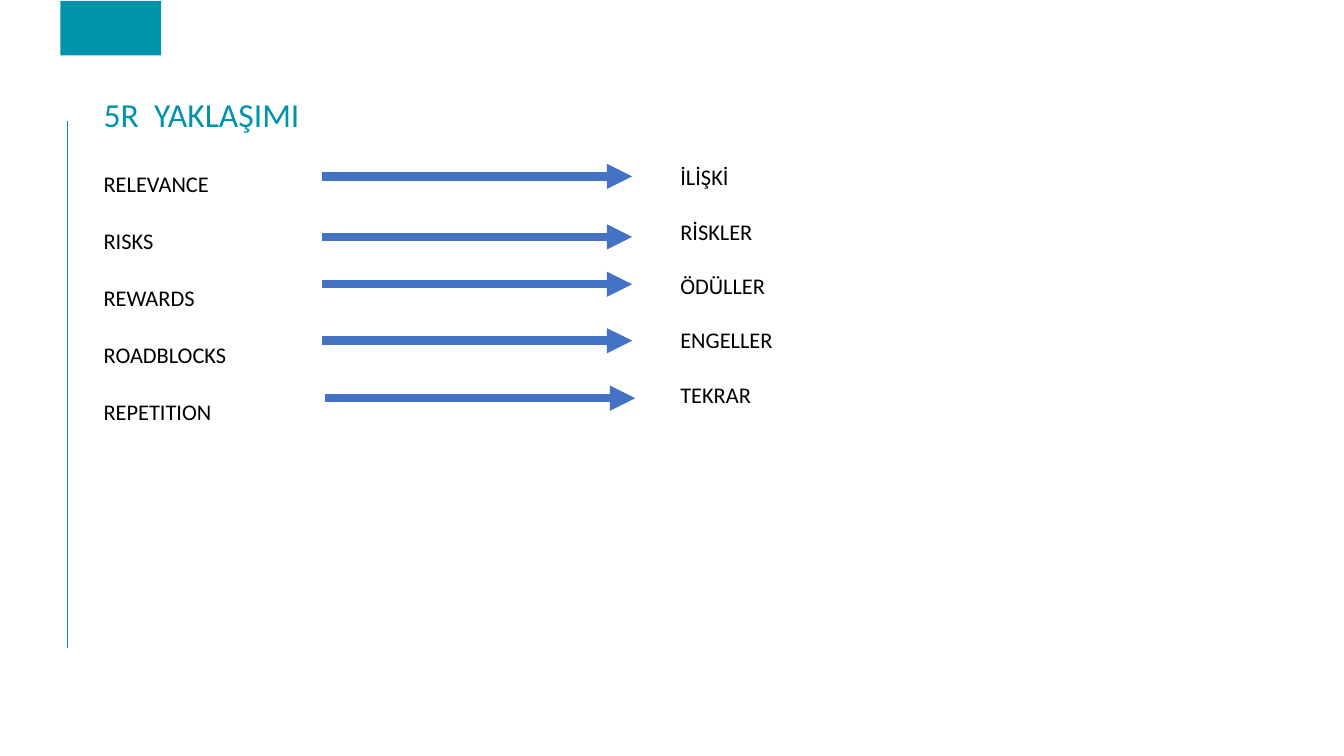
"""Builds the 5R approach slide."""
from pptx import Presentation
from pptx.dml.color import RGBColor
from pptx.enum.shapes import MSO_CONNECTOR, MSO_SHAPE
from pptx.enum.text import MSO_ANCHOR
from pptx.oxml.ns import qn
from pptx.util import Inches, Pt
from lxml.etree import SubElement

TEAL = RGBColor(0x00, 0x94, 0xAB)
BLUE = RGBColor(0x44, 0x72, 0xC4)
BLACK = RGBColor(0x00, 0x00, 0x00)
FONT = "Calibri"

ENGLISH_TERMS = ["RELEVANCE", "RISKS", "REWARDS", "ROADBLOCKS", "REPETITION"]
TURKISH_TERMS = ["İLİŞKİ", "RİSKLER", "ÖDÜLLER", "ENGELLER", "TEKRAR"]
ARROW_LENGTH = 3.08
ARROW_STARTS = [(3.19, 1.75), (3.19, 2.35), (3.19, 2.82), (3.19, 3.38), (3.22, 3.95)]


def add_text(slide, box, lines, size, color, spacing, anchor=MSO_ANCHOR.TOP):
    """Add a text box with one paragraph per line."""
    text_frame = slide.shapes.add_textbox(*map(Inches, box)).text_frame
    text_frame.word_wrap = True
    text_frame.vertical_anchor = anchor
    text_frame.text = "\n".join(lines)
    for index, paragraph in enumerate(text_frame.paragraphs):
        paragraph.line_spacing = spacing
        paragraph.space_before = Pt(10 if index else 0)
        for run in paragraph.runs:
            run.font.name = FONT
            run.font.size = Pt(size)
            run.font.color.rgb = color


def add_line(slide, start, end, color, width):
    """Add a straight line without a shadow and return it."""
    line = slide.shapes.add_connector(
        MSO_CONNECTOR.STRAIGHT, *map(Inches, (*start, *end))
    )
    line.line.color.rgb = color
    line.line.width = Pt(width)
    SubElement(line._element.spPr, qn("a:effectLst"))
    return line


def add_arrow(slide, left, top):
    """Add a thick horizontal arrow pointing right."""
    arrow = add_line(slide, (left, top), (left + ARROW_LENGTH, top), BLUE, 6)
    SubElement(arrow.line._get_or_add_ln(), qn("a:tailEnd"), type="triangle")


def add_block(slide, box, color):
    """Add a plain filled rectangle."""
    shape = slide.shapes.add_shape(MSO_SHAPE.RECTANGLE, *map(Inches, box))
    shape.shadow.inherit = False
    shape.fill.solid()
    shape.fill.fore_color.rgb = color
    shape.line.fill.background()


def main():
    """Build and save the slide."""
    presentation = Presentation()
    presentation.slide_width = Inches(13.33)
    presentation.slide_height = Inches(7.5)
    slide = presentation.slides.add_slide(presentation.slide_layouts[6])

    add_line(slide, (0.67, 1.2), (0.67, 6.43), TEAL, 1)
    add_block(slide, (0.6, 0.01, 1, 0.54), TEAL)
    add_text(slide, (0.93, 0.88, 12.13, 0.55), ["5R  YAKLAŞIMI"], 24, TEAL, 0.9,
             MSO_ANCHOR.MIDDLE)
    add_text(slide, (0.93, 1.48, 11.8, 4.95), ENGLISH_TERMS, 16, BLACK, 1.6)
    add_text(slide, (6.65, 1.44, 5.67, 4.76), TURKISH_TERMS, 16, BLACK, 1.5)
    for left, top in ARROW_STARTS:
        add_arrow(slide, left, top)

    presentation.save("out.pptx")


if __name__ == "__main__":
    main()
